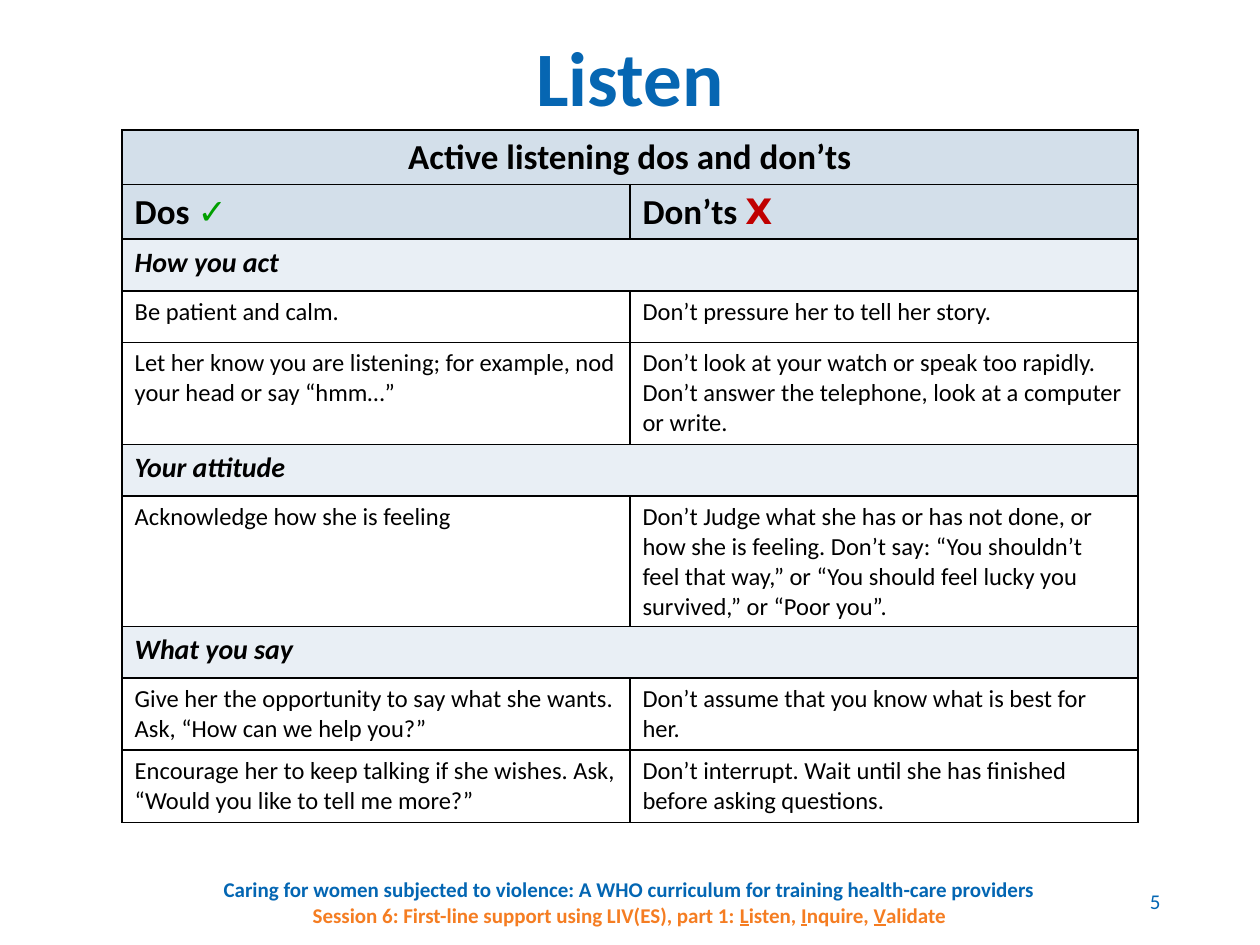
from dataclasses import dataclass

import pptx
import pptx.dml.color
import pptx.enum.text
import pptx.oxml
import pptx.oxml.ns
import pptx.util
from pptx.util import Pt

Align = pptx.enum.text.PP_ALIGN
Anchor = pptx.enum.text.MSO_ANCHOR


@dataclass(frozen=True)
class Theme:
    font: str = "Calibri"
    title_blue: str = "0666B2"
    footer_blue: str = "0366B3"
    orange: str = "F57D22"
    green: str = "009F00"
    red: str = "C00000"
    black: str = "000000"
    white: str = "FFFFFF"
    header_fill: str = "D3DFEA"
    section_fill: str = "E9EFF5"
    title_size: int = 44
    header_size: int = 20
    section_size: int = 16
    body_size: int = 14
    footer_size: int = 12


THEME = Theme()

# Each row: height in points, kind, cell texts (a single text spans both columns)
ROWS = [
    (29.5, "header", ["Active listening dos and don’ts"]),
    (29.5, "header", ["Dos ", "Don’ts "]),
    (29.5, "section", ["How you act"]),
    (29.5, "advice", ["Be patient and calm.", "Don’t pressure her to tell her story."]),
    (58.3, "advice", [
        "Let her know you are listening; for example, nod your head or say “hmm…”",
        "Don’t look at your watch or speak too rapidly. Don’t answer the telephone, "
        "look at a computer or write."]),
    (29.5, "section", ["Your attitude"]),
    (74.5, "advice", [
        "Acknowledge how she is feeling",
        "Don’t Judge what she has or has not done, or how she is feeling. Don’t say: "
        "“You shouldn’t feel that way,” or “You should feel lucky you survived,” or “Poor you”."]),
    (29.5, "section", ["What you say"]),
    (41.3, "advice", [
        "Give her the opportunity to say what she wants. Ask, “How can we help you?”",
        "Don’t assume that you know what is best for her."]),
    (41.3, "advice", [
        "Encourage her to keep talking if she wishes. Ask, “Would you like to tell me more?”",
        "Don’t interrupt. Wait until she has finished before asking questions."]),
]

# Kind: fill, type size, bold, italic
ROW_STYLES = {
    "header": (THEME.header_fill, THEME.header_size, True, False),
    "section": (THEME.section_fill, THEME.section_size, True, True),
    "advice": (THEME.white, THEME.body_size, False, False),
}


def rgb(value):
    return pptx.dml.color.RGBColor.from_string(value)


def format_run(run, size, color, bold=False, italic=False, underline=False):
    font = run.font
    font.name, font.size = THEME.font, Pt(size)
    font.bold, font.italic, font.underline = bold, italic, underline
    font.color.rgb = rgb(color)


def add_run(paragraph, text, *style, **options):
    run = paragraph.add_run()
    run.text = text
    format_run(run, *style, **options)


def add_title(slide):
    title = slide.shapes.title
    title.left, title.top, title.width, title.height = Pt(49.7), Pt(-5.8), Pt(620.6), Pt(104.4)
    title.text_frame.text = "Listen"
    title.text_frame.vertical_anchor = Anchor.MIDDLE
    heading = title.text_frame.paragraphs[0]
    heading.alignment = Align.CENTER
    heading.line_spacing = 0.9
    format_run(heading.runs[0], THEME.title_size, THEME.title_blue, bold=True)


def add_caption(slide, left, top, width, height, alignment):
    """Add an empty, vertically centred text box and return its paragraph."""
    frame = slide.shapes.add_textbox(Pt(left), Pt(top), Pt(width), Pt(height)).text_frame
    frame.word_wrap = True
    frame.vertical_anchor = Anchor.MIDDLE
    frame.paragraphs[0].alignment = alignment
    return frame.paragraphs[0]


def add_footer(slide):
    footer = add_caption(slide, 115.9, 493.9, 487.4, 43.2, Align.CENTER)
    add_run(footer, "Caring for women subjected to violence: "
            "A WHO curriculum for training health-care providers",
            THEME.footer_size, THEME.footer_blue, bold=True)
    footer.add_line_break()
    session = [("Session 6: First-line support using LIV(ES), part 1: ", False),
               ("L", True), ("isten, ", False), ("I", True), ("nquire, ", False),
               ("V", True), ("alidate", False)]
    for text, underline in session:
        add_run(footer, text, THEME.footer_size, THEME.orange, bold=True, underline=underline)

    page_number = add_caption(slide, 631.4, 500.4, 38.9, 28.8, Align.RIGHT)
    add_run(page_number, "5", THEME.footer_size, THEME.footer_blue)


def set_borders(cell):
    properties = cell._tc.get_or_add_tcPr()
    for index, side in enumerate(("lnL", "lnR", "lnT", "lnB")):
        border = pptx.oxml.parse_xml(
            f'<a:{side} {pptx.oxml.ns.nsdecls("a")} w="{Pt(1)}"><a:solidFill>'
            f'<a:srgbClr val="{THEME.black}"/></a:solidFill></a:{side}>')
        properties.insert(index, border)


def fill_row(table, index, kind, texts):
    fill, size, bold, italic = ROW_STYLES[kind]
    cells = [table.cell(index, column) for column in range(2)]
    if len(texts) == 1:
        cells[0].merge(cells[1])
    for cell in cells:
        cell.fill.solid()
        cell.fill.fore_color.rgb = rgb(fill)
        set_borders(cell)
    for cell, text in zip(cells, texts):
        cell.text_frame.text = text
        format_run(cell.text_frame.paragraphs[0].runs[0], size, THEME.black, bold, italic)


def add_advice_table(slide):
    height = sum(row[0] for row in ROWS)
    table = slide.shapes.add_table(
        len(ROWS), 2, Pt(69.8), Pt(74.2), Pt(580.4), Pt(height)).table
    table.first_row = table.horz_banding = False
    for index, (row_height, kind, texts) in enumerate(ROWS):
        table.rows[index].height = Pt(row_height)
        fill_row(table, index, kind, texts)
    table.cell(0, 0).text_frame.paragraphs[0].alignment = Align.CENTER
    for column, (mark, color) in enumerate([("✓", THEME.green), ("𝗫", THEME.red)]):
        heading = table.cell(1, column).text_frame.paragraphs[0]
        add_run(heading, mark, THEME.header_size, color, bold=True)


def main():
    presentation = pptx.Presentation()
    presentation.slide_width, presentation.slide_height = Pt(720), Pt(540)
    slide = presentation.slides.add_slide(presentation.slide_layouts[5])
    add_title(slide)
    add_footer(slide)
    add_advice_table(slide)
    presentation.save("out.pptx")


if __name__ == "__main__":
    main()
